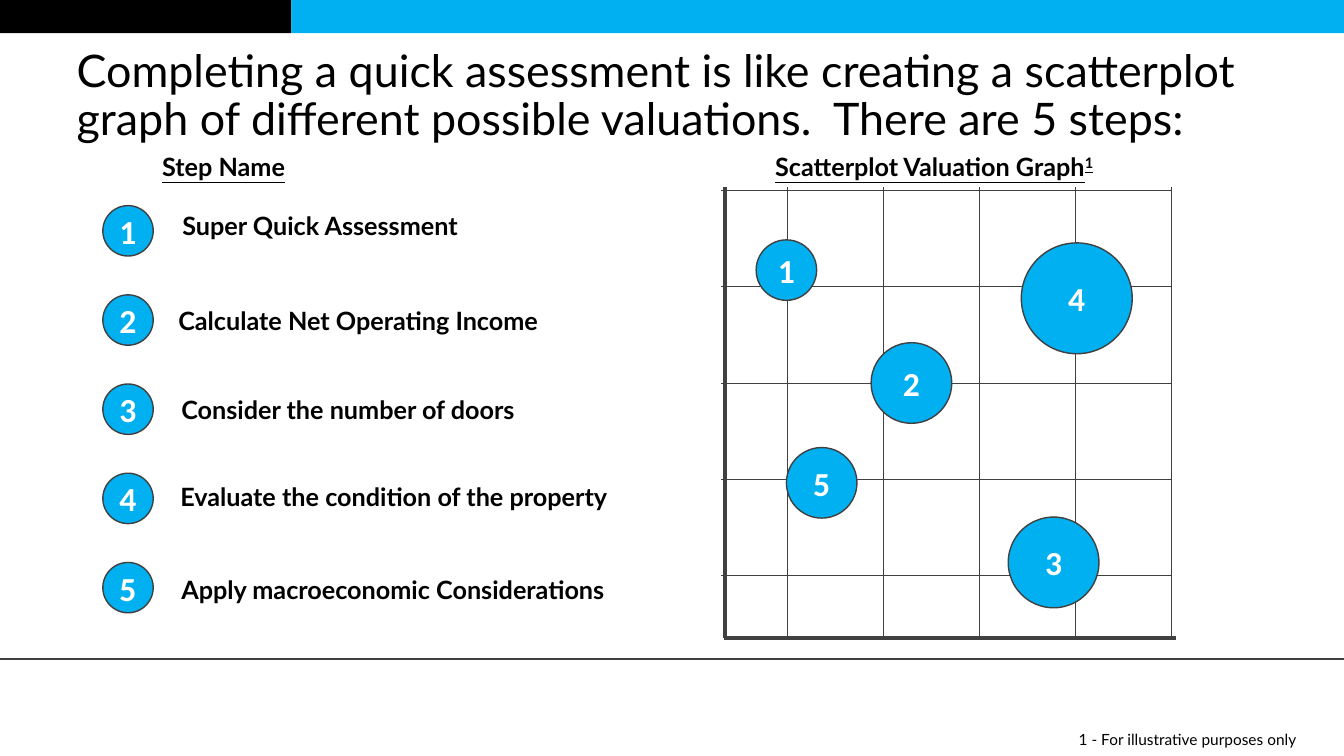
from pptx import Presentation, util as u
from pptx.dml.color import RGBColor
from pptx.enum import shapes, text
from pptx.oxml import parse_xml
from pptx.oxml.ns import nsdecls

COLORS = {"black": "000000", "blue": "00B0F0", "gray": "404040", "white": "FFFFFF"}

TITLE = ("Completing a quick assessment is like creating a scatterplot graph "
         "of different possible valuations.  There are 5 steps:")
STEPS = [
    ("Super Quick Assessment", 1.71, 2.04),
    ("Calculate Net Operating Income", 1.67, 2.98),
    ("Consider the number of doors", 1.7, 3.86),
    ("Evaluate the condition of the property", 1.69, 4.73),
    ("Apply macroeconomic Considerations", 1.7, 5.65),
]
BUBBLES = [
    ("1", 7.5, 2.38, 0.6),
    ("5", 7.8, 4.44, 0.7),
    ("2", 8.64, 3.4, 0.8),
    ("3", 10, 5.13, 0.9),
    ("4", 10.13, 2.41, 1.1),
]
BANDS = [("black", 0, 2.89), ("blue", 2.89, 10.44)]

GRID_LEFT, GRID_RIGHT, GRID_TOP, GRID_BOTTOM = 7.15, 11.62, 1.86, 6.33
FIRST_COLUMN, FIRST_ROW, LAST_ROW, GAPS = 7.81, 1.89, 5.71, 4
FIRST_STEP, STEP_GAP, STEP_SIZE = 2.04, 0.885, 0.5

prs = Presentation()
prs.slide_width, prs.slide_height = u.Inches(13.33), u.Inches(7.5)
slide = prs.slides.add_slide(prs.slide_layouts[5])


def rgb(name):
    return RGBColor.from_string(COLORS[name])


def write(frame, words, size=18, font="Lato", color="black", bold=False,
          underline=False, align="LEFT", anchor="TOP", superscript=""):
    frame.word_wrap = True
    frame.vertical_anchor = getattr(text.MSO_ANCHOR, anchor)
    paragraph = frame.paragraphs[0]
    paragraph.alignment = getattr(text.PP_ALIGN, align)
    for part in filter(None, (words, superscript)):
        run = paragraph.add_run()
        run.text = part
        run.font.size, run.font.name = u.Pt(size), font
        run.font.bold, run.font.underline = bold, underline
        run.font.color.rgb = rgb(color)
    if superscript:
        run.font._element.set("baseline", "30000")
    return paragraph


def label(words, x, y, width, height=0.4, **style):
    box = slide.shapes.add_textbox(*map(u.Inches, (x, y, width, height)))
    write(box.text_frame, words, **style)


def solid(kind, x, y, width, height, fill):
    shape = slide.shapes.add_shape(kind, *map(u.Inches, (x, y, width, height)))
    shape.shadow.inherit = False
    shape.fill.solid()
    shape.fill.fore_color.rgb = rgb(fill)
    return shape


def circle(number, x, y, size):
    shape = solid(shapes.MSO_SHAPE.OVAL, x, y, size, size, "blue")
    shape.line.color.rgb = rgb("gray")
    shape.line.width = u.Pt(1)
    frame = shape.text_frame
    frame.margin_left = frame.margin_right = 0
    frame.margin_top = frame.margin_bottom = 0
    write(frame, number, size=24, font="Calibri", color="white", bold=True,
          align="CENTER", anchor="MIDDLE")


def line(x1, y1, x2, y2, weight=0.5):
    rule = slide.shapes.add_connector(shapes.MSO_CONNECTOR.STRAIGHT,
                                      *map(u.Inches, (x1, y1, x2, y2)))
    rule.line.color.rgb = rgb("gray")
    rule.line.width = u.Pt(weight)
    rule._element.spPr.append(parse_xml(f"<a:effectLst {nsdecls('a')}/>"))


for fill, x, width in BANDS:
    solid(shapes.MSO_SHAPE.RECTANGLE, x, 0, width, 0.33, fill).line.fill.background()
line(0, 6.54, 13.33, 6.54, 1.75)

title = slide.shapes.title
title.left, title.top, title.width, title.height = map(u.Inches, (0.66, 0.51, 12, 0.9))
write(title.text_frame, TITLE, size=32, anchor="MIDDLE").line_spacing = 0.9
title.text_frame.auto_size = text.MSO_AUTO_SIZE.NONE

for i in range(GAPS + 1):
    y = FIRST_ROW + i * (LAST_ROW - FIRST_ROW) / GAPS
    line(GRID_LEFT, y, GRID_RIGHT, y)
for i in range(GAPS + 1):
    x = FIRST_COLUMN + i * (GRID_RIGHT - FIRST_COLUMN) / GAPS
    line(x, GRID_TOP, x, GRID_BOTTOM)
line(7.19, GRID_TOP, 7.19, GRID_BOTTOM, 3)
line(7.18, GRID_BOTTOM, 11.66, GRID_BOTTOM, 3)
for bubble in BUBBLES:
    circle(*bubble)

label("Step Name", 1.51, 1.45, 3.83, bold=True, underline=True)
label("Scatterplot Valuation Graph", 7.59, 1.45, 3.83, bold=True, underline=True,
      superscript="1")
for i, (step, x, y) in enumerate(STEPS):
    circle(str(i + 1), 1.02, FIRST_STEP + i * STEP_GAP, STEP_SIZE)
    label(step, x, y, 4.66, bold=True)
label("1 - For illustrative purposes only", 10.6, 7.19, 2.73, 0.29, size=11,
      anchor="MIDDLE")

prs.save("out.pptx")
